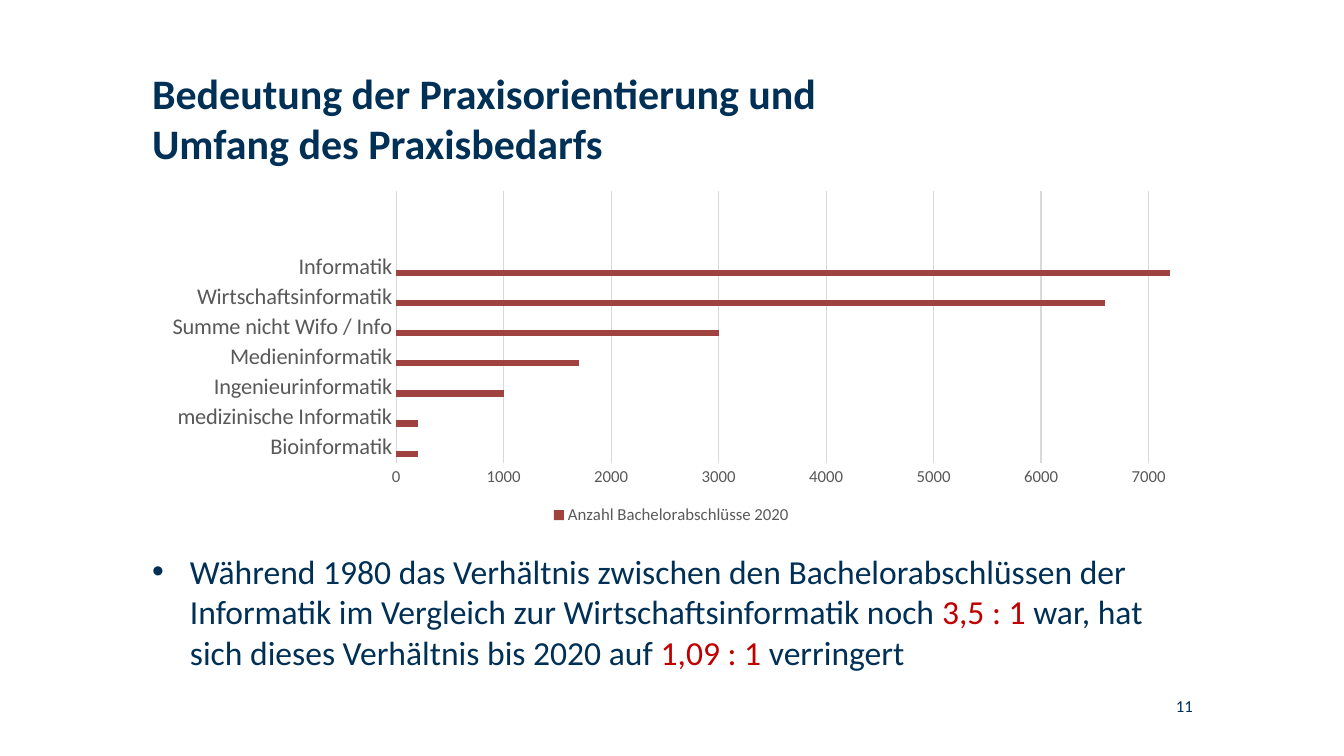
from lxml.etree import SubElement
from pptx import Presentation
from pptx.chart.data import CategoryChartData
from pptx.dml.color import RGBColor
from pptx.enum.chart import XL_CHART_TYPE, XL_LEGEND_POSITION, XL_TICK_MARK
from pptx.enum.text import PP_ALIGN
from pptx.oxml import parse_xml
from pptx.oxml.ns import nsdecls, qn
from pptx.util import Pt

COLORS = {
    "navy": "003056",
    "red": "C00000",
    "gray": "595959",
    "grid": "D9D9D9",
    "degrees": "9F4240",
    "second": "C0504D",
    "third": "D9AAAA",
}
FONT = "Calibri"
LEFT, CONTENT_WIDTH = 108.7, 742.3


def rgb(name):
    return RGBColor.from_string(COLORS[name])


def add_text(runs, left, top, width, height, size, bold=False, align=PP_ALIGN.LEFT):
    """Add a text box without margins; runs are (text, colour name) pairs."""
    box = slide.shapes.add_textbox(Pt(left), Pt(top), Pt(width), Pt(height))
    frame = box.text_frame
    frame.word_wrap = True
    frame.margin_left = frame.margin_right = frame.margin_top = frame.margin_bottom = 0
    paragraph = frame.paragraphs[0]
    paragraph.alignment = align
    for text, color in runs:
        run = paragraph.add_run()
        run.text = text
        run.font.name, run.font.size, run.font.bold = FONT, Pt(size), bold
        run.font.color.rgb = rgb(color)
    return paragraph


presentation = Presentation()
presentation.slide_width, presentation.slide_height = Pt(960.5), Pt(540)
slide = presentation.slides.add_slide(presentation.slide_layouts[6])

add_text([("Bedeutung der Praxisorientierung und Umfang des Praxisbedarfs", "navy")],
         LEFT, 48.2, 508.3, 98.6, 30, bold=True)

# Bachelor degrees by subject; two empty categories leave room at the top
degrees = {
    "Bioinformatik": 200,
    "medizinische Informatik": 200,
    "Ingenieurinformatik": 1000,
    "Medieninformatik": 1700,
    "Summe nicht Wifo / Info": 3000,
    "Wirtschaftsinformatik": 6600,
    "Informatik": 7200,
}
chart_data = CategoryChartData()
chart_data.categories = [*degrees, "", ""]
empty = [None] * 9
chart_data.add_series("Anzahl Bachelorabschlüsse 2020", [*degrees.values(), None, None])
chart_data.add_series("Spalte2", empty)
chart_data.add_series("Spalte3", empty)
chart = slide.shapes.add_chart(XL_CHART_TYPE.BAR_CLUSTERED, Pt(LEFT), Pt(131.8),
                               Pt(CONTENT_WIDTH), Pt(246.2), chart_data).chart
chart.has_title = False
chart.font.name, chart.font.size = FONT, Pt(10)

plot = chart.plots[0]
plot.gap_width, plot.overlap, plot.vary_by_categories = 182, 0, False
for series, color in zip(plot.series, ("degrees", "second", "third")):
    series.format.fill.solid()
    series.format.fill.fore_color.rgb = rgb(color)

chart.has_legend = True
legend = chart.legend
legend.position, legend.include_in_layout = XL_LEGEND_POSITION.BOTTOM, False

category_axis, value_axis = chart.category_axis, chart.value_axis
for axis in (category_axis, value_axis):
    axis.major_tick_mark = axis.minor_tick_mark = XL_TICK_MARK.NONE
for font, size in ((category_axis.tick_labels.font, 16),
                   (value_axis.tick_labels.font, 12), (legend.font, 12)):
    font.name, font.size = FONT, Pt(size)
    font.color.rgb = rgb("gray")
value_axis.minimum_scale, value_axis.maximum_scale, value_axis.major_unit = 0, 7200, 1000
value_axis.has_major_gridlines = True
value_axis.format.line.fill.background()
for line in (category_axis.format.line, value_axis.major_gridlines.format.line):
    line.width = Pt(0.75)
    line.color.rgb = rgb("grid")

# Only the degrees appear in the legend
for position, index in enumerate((0, 1), start=1):
    legend._element.insert(position, parse_xml(
        f'<c:legendEntry {nsdecls("c")}><c:idx val="{index}"/><c:delete val="1"/></c:legendEntry>'))

# Fixed inner plot area, as shares of the chart
plot_area = chart._chartSpace.chart.plotArea
for old_layout in plot_area.findall(qn("c:layout")):
    plot_area.remove(old_layout)
layout = parse_xml(f'<c:layout {nsdecls("c")}><c:manualLayout/></c:layout>')
for tag, value in (("layoutTarget", "inner"), ("xMode", "edge"), ("yMode", "edge"),
                   ("x", 0.235), ("y", 0.02), ("w", 0.745), ("h", 0.787)):
    SubElement(layout[0], qn(f"c:{tag}")).set("val", str(value))
plot_area.insert(0, layout)

add_text([("11", "navy")], 741.6, 497, 110.9, 14.4, 12, align=PP_ALIGN.RIGHT)

statement = add_text([
    ("Während 1980 das Verhältnis zwischen den Bachelorabschlüssen der Informatik "
     "im Vergleich zur Wirtschaftsinformatik noch ", "navy"),
    ("3,5 : 1", "red"),
    (" war, hat sich dieses Verhältnis bis 2020 auf ", "navy"),
    ("1,09 : 1", "red"),
    (" verringert", "navy"),
], LEFT, 393.6, CONTENT_WIDTH, 103.7, 24)
properties = statement._p.get_or_add_pPr()
properties.set("marL", str(Pt(27)))
properties.set("indent", str(-Pt(27)))
SubElement(properties, qn("a:buFont")).set("typeface", "Arial")
SubElement(properties, qn("a:buChar")).set("char", "•")

presentation.save("out.pptx")
